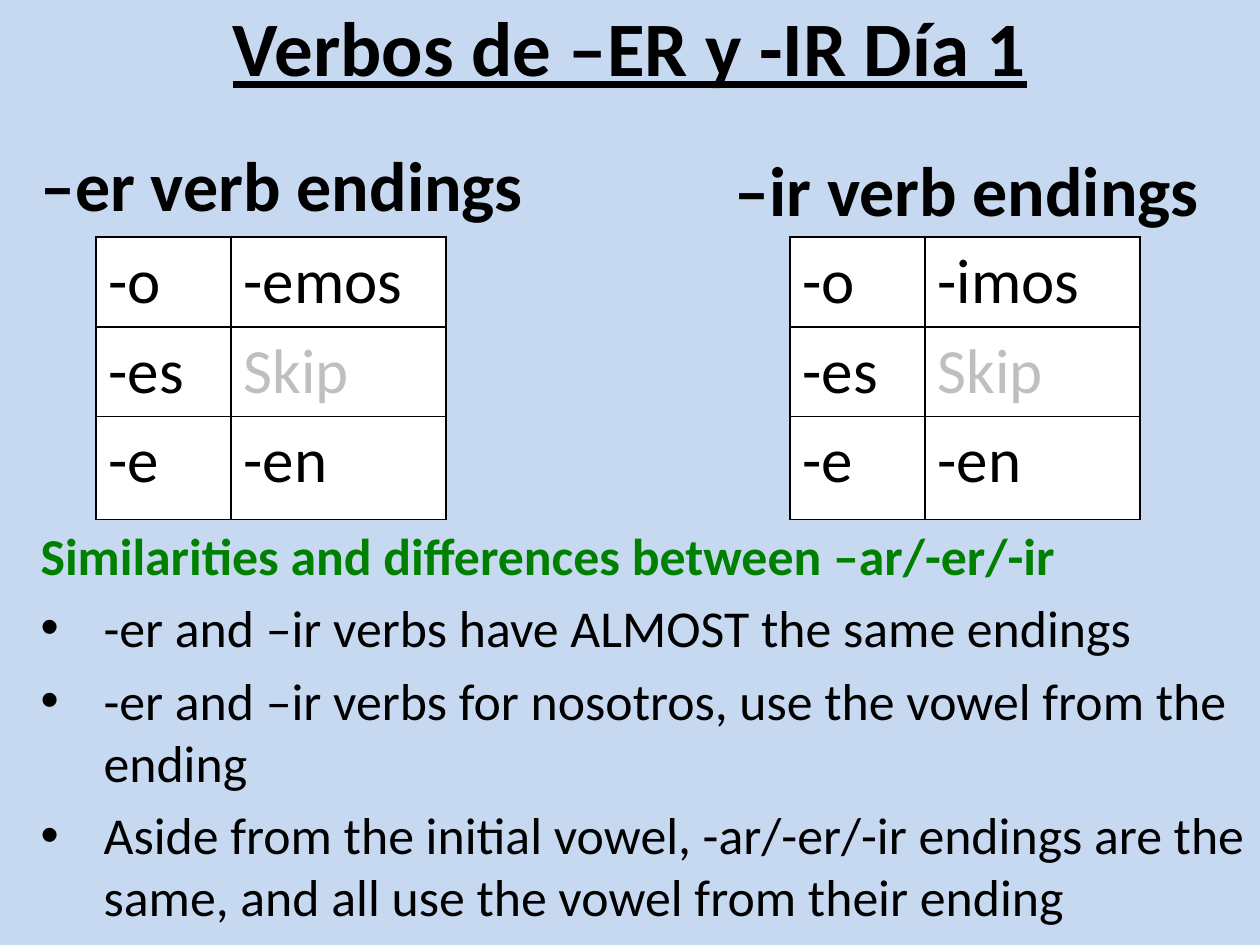
import pptx
import pptx.util
import pptx.dml.color
import pptx.enum.text
import pptx.oxml

COLORS = {
    "background": "C6D9F1",
    "text": "000000",
    "cell": "FFFFFF",
    "muted": "BFBFBF",
    "accent": "008000",
}
FONT = "Calibri"
EMU_PER_PX = 914400 / 126
NS = 'xmlns:a="http://schemas.openxmlformats.org/drawingml/2006/main"'


def px(n):
    return pptx.util.Emu(round(n * EMU_PER_PX))


def rgb(name):
    return pptx.dml.color.RGBColor.from_string(COLORS[name])


class Deck:
    def __init__(self, width, height):
        self.prs = pptx.Presentation()
        self.prs.slide_width = px(width)
        self.prs.slide_height = px(height)
        self.s = self.prs.slides.add_slide(self.prs.slide_layouts[1])
        self.s.background.fill.solid()
        self.s.background.fill.fore_color.rgb = rgb("background")

    def style(self, p, size, color="text", bold=False, underline=False):
        for r in p.runs:
            r.font.name = FONT
            r.font.size = pptx.util.Pt(size)
            r.font.bold = bold
            r.font.underline = underline
            r.font.color.rgb = rgb(color)

    def place(self, sp, box):
        sp.left, sp.top, sp.width, sp.height = map(px, box)
        tf = sp.text_frame
        tf.word_wrap = True
        tf.auto_size = pptx.enum.text.MSO_AUTO_SIZE.NONE
        return tf

    def title(self, box, text):
        tf = self.place(self.s.shapes.title, box)
        tf.text = text
        tf.vertical_anchor = pptx.enum.text.MSO_ANCHOR.MIDDLE
        tf.paragraphs[0].alignment = pptx.enum.text.PP_ALIGN.CENTER
        self.style(tf.paragraphs[0], 44, bold=True, underline=True)

    def heading(self, box, text):
        tf = self.place(self.s.shapes.add_textbox(*map(px, box)), box)
        tf.text = text
        self.style(tf.paragraphs[0], 40, bold=True)

    def body(self, box, heading, bullets):
        tf = self.place(self.s.placeholders[1], box)
        tf.text = "\n".join([heading, *bullets])
        for i, p in enumerate(tf.paragraphs):
            pPr = p._p.get_or_add_pPr()
            indent = px(63) if i else 0
            pPr.set("marL", str(indent))
            pPr.set("indent", str(-indent))
            bullet = '<a:buChar {} char="•"/>' if i else "<a:buNone {}/>"
            pPr.append(pptx.oxml.parse_xml(bullet.format(NS)))
            self.style(p, 29.6, "text" if i else "accent", bold=not i)

    def table(self, left, top, cols, rows, data):
        frame = self.s.shapes.add_table(
            len(rows), len(cols), px(left), px(top), px(sum(cols)), px(sum(rows)))
        table = frame.table
        table.first_row = table.horz_banding = False
        for col, width in zip(table.columns, cols):
            col.width = px(width)
        for row, height, texts in zip(table.rows, rows, data):
            row.height = px(height)
            for cell, text in zip(row.cells, texts):
                cell.text = text
                self.style(cell.text_frame.paragraphs[0], 36,
                           "muted" if text == "Skip" else "text")
                self.border(cell)
                cell.fill.solid()
                cell.fill.fore_color.rgb = rgb("cell")

    def border(self, cell):
        tcPr = cell._tc.get_or_add_tcPr()
        for side in "LRTB":
            tcPr.append(pptx.oxml.parse_xml(
                f'<a:ln{side} {NS} w="12700"><a:solidFill>'
                f'<a:srgbClr val="{COLORS["text"]}"/></a:solidFill></a:ln{side}>'))


def main():
    deck = Deck(1260, 945)
    deck.title((0, -39, 1260, 170), "Verbos de –ER y -IR Día 1")
    for ending, nosotros, heading_x, heading_y, table_x in (
        ("er", "-emos", 28, 135, 96),
        ("ir", "-imos", 722, 140, 790),
    ):
        deck.heading((heading_x, heading_y, 538, 145), f"–{ending} verb endings")
        deck.table(table_x, 237, (135, 215), (88, 88, 103),
                   (("-o", nosotros), ("-es", "Skip"), ("-e", "-en")))
    deck.body((28, 517, 1232, 428), "Similarities and differences between –ar/-er/-ir", (
        "-er and –ir verbs have ALMOST the same endings",
        "-er and –ir verbs for nosotros, use the vowel from the ending",
        "Aside from the initial vowel, -ar/-er/-ir endings are the same, "
        "and all use the vowel from their ending",
    ))
    deck.prs.save("out.pptx")


if __name__ == "__main__":
    main()
